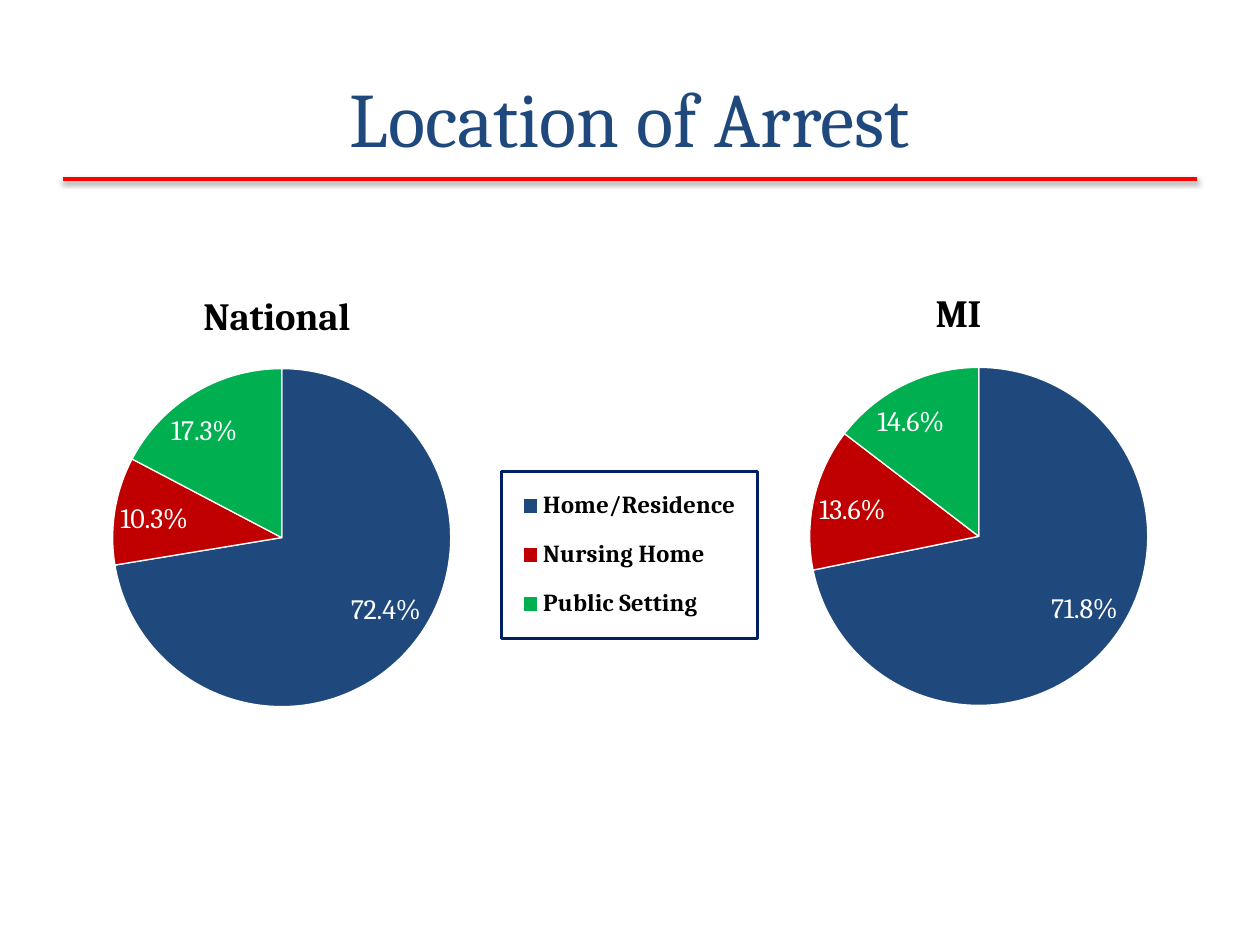
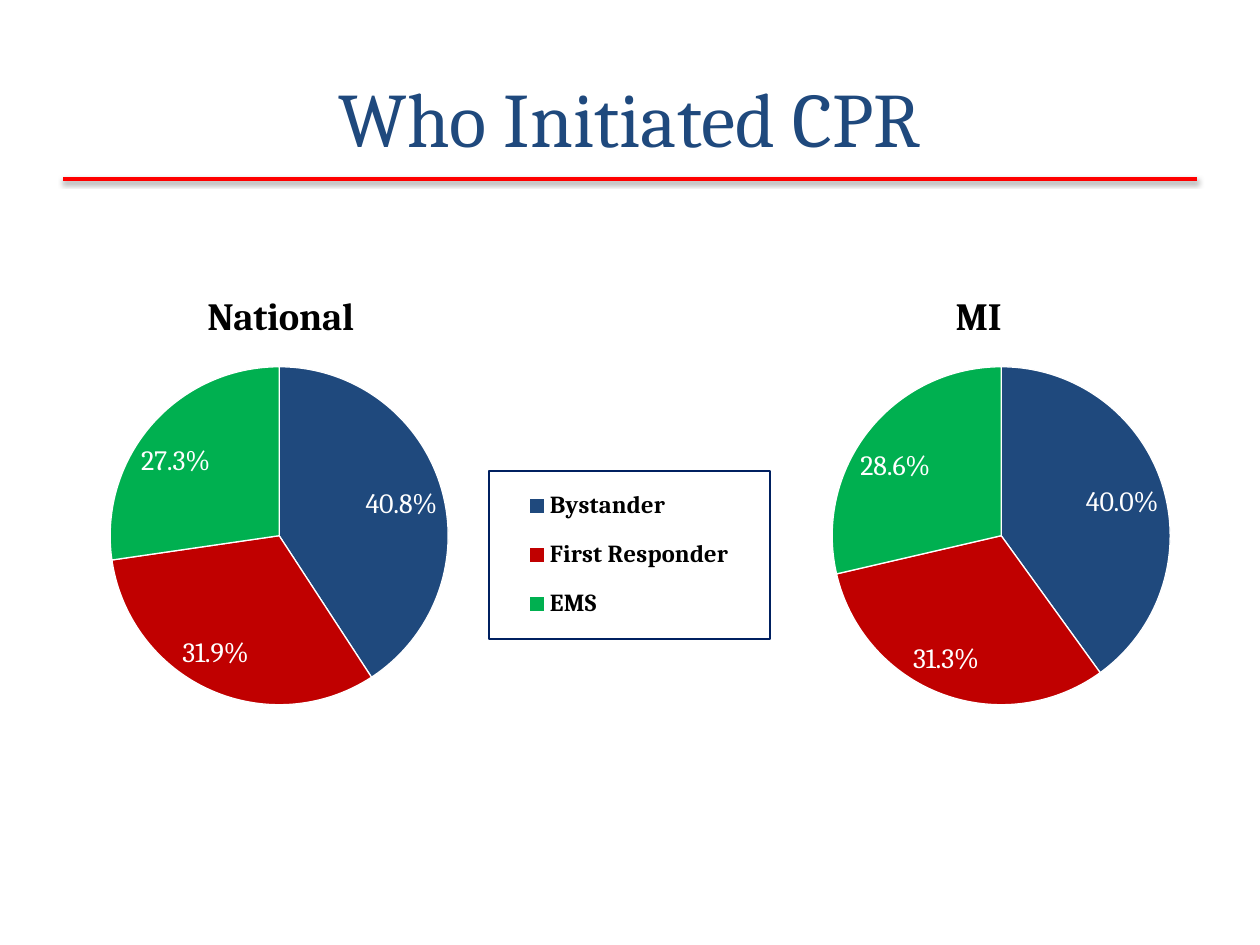
from dataclasses import dataclass

from lxml import etree
from pptx import Presentation
from pptx.chart.data import CategoryChartData
from pptx.dml.color import RGBColor
from pptx.enum.chart import XL_CHART_TYPE as ChartType
from pptx.enum.chart import XL_LABEL_POSITION as LabelPosition
from pptx.enum.chart import XL_LEGEND_POSITION as LegendPosition
from pptx.enum.shapes import MSO_CONNECTOR as Connector
from pptx.enum.text import MSO_ANCHOR as Anchor
from pptx.enum.text import PP_ALIGN as Align
from pptx.oxml import parse_xml
from pptx.oxml.ns import nsdecls, qn
from pptx.util import Inches, Pt

# Content: frames, legends and title corners are in slide inches
SLIDES = [
    {
        "title": "Location of Arrest",
        "categories": ["Home/Residence", "Nursing Home", "Public Setting"],
        "plot": (0.103, 0.276),
        "legend": (3.98, 3.74, 2.03, 1.33),
        "legend_line": 1.5,
        "pies": [
            {"name": "National", "values": [72.4, 10.3, 17.3],
             "frame": (-0.12, 1.56, 6.25, 4.95), "name_at": (1.56, 2.26)},
            {"name": "MI", "values": [71.8, 13.6, 14.6],
             "frame": (5.83, 1.55, 5.14, 4.95), "name_at": (7.37, 2.24)},
        ],
    },
    {
        "title": "Who Initiated CPR",
        "categories": ["Bystander", "First Responder", "EMS"],
        "plot": (0.095, 0.273),
        "legend": (3.88, 3.74, 2.23, 1.33),
        "legend_line": 1,
        "pies": [
            {"name": "National", "values": [40.8, 31.9, 27.3],
             "frame": (-0.09, 1.56, 6.25, 4.95), "name_at": (1.59, 2.26)},
            {"name": "MI", "values": [40, 31.3, 28.6],
             "frame": (5.64, 1.56, 6.25, 4.95), "name_at": (7.53, 2.26)},
        ],
    },
]
PLOT_SIZE = (0.548, 0.542)  # share of the chart frame


@dataclass(frozen=True)
class Theme:
    font: str = "Cambria"
    title: str = "1F497D"
    rule: str = "FF0000"
    text: str = "000000"
    label: str = "FFFFFF"
    legend_border: str = "002060"
    slices: tuple = ("1F497D", "C00000", "00B050")
    title_size: int = 44
    name_size: int = 22
    chart_size: int = 18
    label_size: int = 16
    legend_size: int = 14


THEME = Theme()


def style(font, size, color, bold=False):
    font.name = THEME.font
    font.size = Pt(size)
    font.bold = bold
    font.color.rgb = RGBColor.from_string(color)


# Title and red rule shared by every slide
def add_heading(page, title):
    rule = page.shapes.add_connector(
        Connector.STRAIGHT, Inches(0.5), Inches(1.42), Inches(9.5), Inches(1.42))
    rule.line.color.rgb = RGBColor.from_string(THEME.rule)
    rule.line.width = Pt(2)
    rule._element.spPr.append(parse_xml(
        f'<a:effectLst {nsdecls("a")}>'
        f'<a:outerShdw blurRad="{Pt(3.1)}" dist="{Pt(1.6)}" dir="5400000" rotWithShape="0">'
        '<a:srgbClr val="000000"><a:alpha val="38000"/></a:srgbClr>'
        '</a:outerShdw></a:effectLst>'))

    box = page.shapes.add_textbox(Inches(0.5), Inches(0.3), Inches(9), Inches(1.25))
    frame = box.text_frame
    frame.word_wrap = True
    frame.vertical_anchor = Anchor.MIDDLE
    para = frame.paragraphs[0]
    para.alignment = Align.CENTER
    span = para.add_run()
    span.text = title
    style(span.font, THEME.title_size, THEME.title)


# Manual placement of a chart part, in shares of the chart frame
def place(part, x, y, size=(), after=None, inner=False):
    for old in part.findall(qn("c:layout")):
        part.remove(old)
    layout = etree.Element(qn("c:layout"))
    manual = etree.SubElement(layout, qn("c:manualLayout"))
    settings = [("layoutTarget", "inner")] if inner else []
    settings += [("xMode", "edge"), ("yMode", "edge"), ("x", x), ("y", y)]
    settings += list(zip("wh", size))
    for tag, value in settings:
        text = value if isinstance(value, str) else f"{value:.4f}"
        etree.SubElement(manual, qn(f"c:{tag}")).set("val", text)
    if after:
        part.find(qn(after)).addnext(layout)
    else:
        part.insert(0, layout)


def share_of(frame, x, y):
    left, top, width, height = frame
    return (x - left) / width, (y - top) / height


def add_legend(chart, frame, legend_box, line_width):
    chart.has_legend = True
    legend = chart.legend
    legend.position = LegendPosition.RIGHT
    legend.include_in_layout = False
    style(legend.font, THEME.legend_size, THEME.text, bold=True)
    part = legend._element
    x, y, width, height = legend_box
    place(part, *share_of(frame, x, y),
          (width / frame[2], height / frame[3]), after="c:legendPos")
    part.find(qn("c:overlay")).addnext(parse_xml(
        f'<c:spPr {nsdecls("c", "a")}><a:ln w="{Pt(line_width)}"><a:solidFill>'
        f'<a:srgbClr val="{THEME.legend_border}"/></a:solidFill></a:ln></c:spPr>'))


def add_pie(page, pie, categories, plot_at):
    data = CategoryChartData()
    data.categories = categories
    data.add_series("Series 1", pie["values"])
    frame = pie["frame"]
    chart = page.shapes.add_chart(
        ChartType.PIE, *(Inches(length) for length in frame), data).chart
    style(chart.font, THEME.chart_size, THEME.text)
    chart.has_legend = False

    # Name above the pie
    chart.has_title = True
    span = chart.chart_title.text_frame.paragraphs[0].add_run()
    span.text = pie["name"]
    style(span.font, THEME.name_size, THEME.text, bold=True)
    place(chart.chart_title._element, *share_of(frame, *pie["name_at"]), after="c:tx")

    # Slices and their percentages
    plot = chart.plots[0]
    plot.vary_by_categories = True
    place(plot._element.getparent(), *plot_at, PLOT_SIZE, inner=True)
    series = plot.series[0]
    for index, color in enumerate(THEME.slices):
        look = series.points[index].format
        look.fill.solid()
        look.fill.fore_color.rgb = RGBColor.from_string(color)
        look.line.color.rgb = RGBColor.from_string(THEME.label)
        look.line.width = Pt(0.75)
    labels = series.data_labels
    labels.show_percentage = True
    labels.show_value = False
    labels.number_format = "0.0%"
    labels.number_format_is_linked = False
    labels.position = LabelPosition.BEST_FIT
    style(labels.font, THEME.label_size, THEME.label)
    return chart


def main():
    deck = Presentation()
    deck.slide_width, deck.slide_height = Inches(10), Inches(7.5)
    for content in SLIDES:
        page = deck.slides.add_slide(deck.slide_layouts[6])
        add_heading(page, content["title"])
        charts = [add_pie(page, pie, content["categories"], content["plot"])
                  for pie in content["pies"]]
        # The first chart carries the legend for both
        add_legend(charts[0], content["pies"][0]["frame"],
                   content["legend"], content["legend_line"])
    deck.save("out.pptx")


if __name__ == "__main__":
    main()
